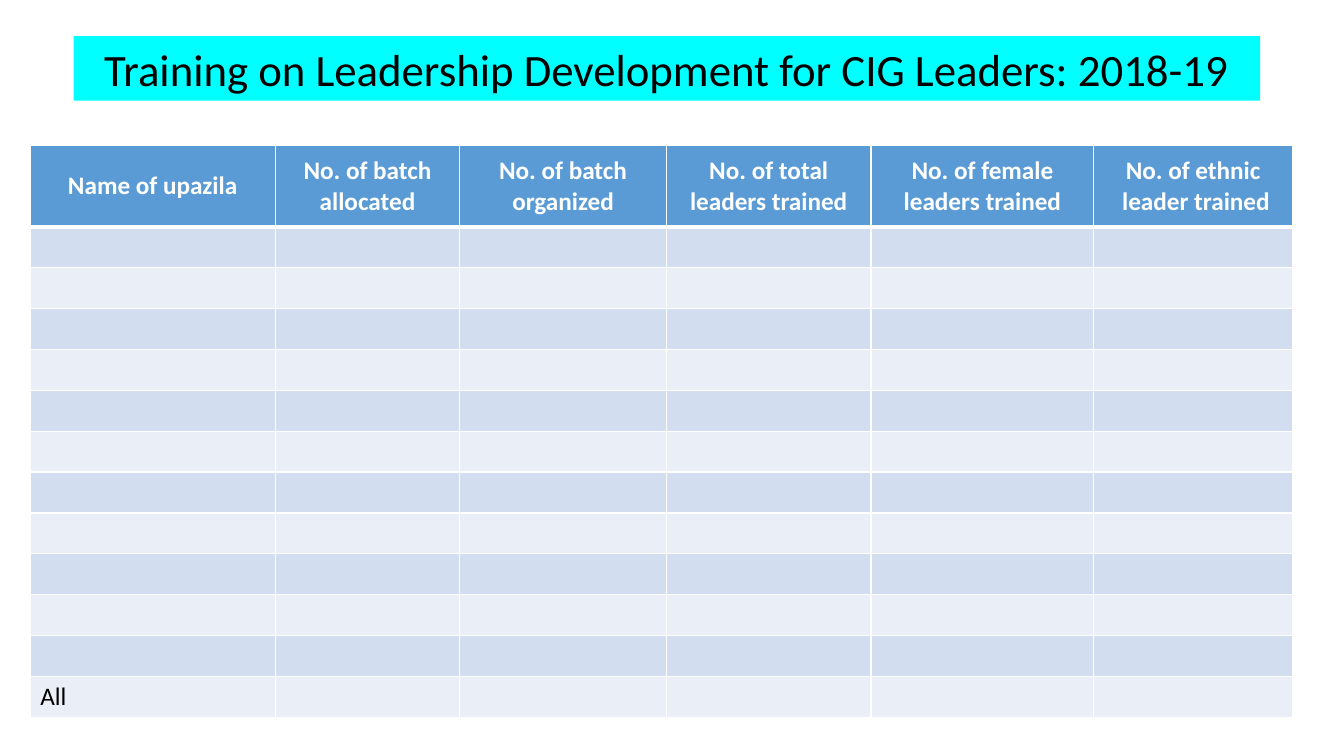
from lxml import etree
from pptx import Presentation
from pptx import util as u
from pptx.dml.color import RGBColor
from pptx.enum import shapes, text
from pptx.oxml.ns import qn

TITLE = "Training on Leadership Development for CIG Leaders: 2018-19"
HEADS = [
    "Name of upazila",
    "No. of batch allocated",
    "No. of batch organized",
    " No. of total \nleaders trained",
    " No. of female \nleaders trained",
    " No. of ethnic \n leader trained",
]
TOTAL = "All"
WIDTHS = [2.43, 1.83, 2.05, 2.03, 2.21, 1.97]
HEAD_H, ROW_H, ROWS = 0.81, 0.405, 12
WIDE, HIGH = 13.33, 7.5
LEFT, TOP = 0.3, 1.44
BAR_W, BAR_H, BAR_TOP = 11.77, 0.64, 0.36

BLACK = RGBColor(0, 0, 0)
WHITE = RGBColor(255, 255, 255)
CYAN = RGBColor(0, 255, 255)
BLUE = RGBColor(0x5B, 0x9B, 0xD5)
BANDS = [RGBColor(0xEA, 0xEF, 0xF7), RGBColor(0xD2, 0xDE, 0xEF)]


def write(frame, words, size=18, color=BLACK, bold=False, align=text.PP_ALIGN.CENTER):
    frame.word_wrap = True
    for i, line in enumerate(words.split("\n")):
        para = frame.add_paragraph() if i else frame.paragraphs[0]
        para.alignment = align
        run = para.add_run()
        run.text = line
        font = run.font
        font.name, font.size, font.bold = "Calibri", u.Pt(size), bold
        font.color.rgb = color


def edge(cell, sides):
    props = cell._tc.get_or_add_tcPr()
    for side, width in sides.items():
        line = etree.SubElement(props, qn("a:ln" + side), w=str(u.Pt(width)))
        fill = etree.SubElement(line, qn("a:solidFill"))
        etree.SubElement(fill, qn("a:srgbClr"), val=str(WHITE))


def paint(part, color):
    part.fill.solid()
    part.fill.fore_color.rgb = color


deck = Presentation()
deck.slide_width, deck.slide_height = u.Inches(WIDE), u.Inches(HIGH)
slide = deck.slides.add_slide(deck.slide_layouts[6])

bar = slide.shapes.add_shape(
    shapes.MSO_SHAPE.RECTANGLE,
    u.Inches((WIDE - BAR_W) / 2 - 0.05), u.Inches(BAR_TOP),
    u.Inches(BAR_W), u.Inches(BAR_H))
bar.shadow.inherit = False
bar.line.fill.background()
paint(bar, CYAN)
write(bar.text_frame, TITLE, size=32)

grid = slide.shapes.add_table(
    ROWS + 1, len(WIDTHS), u.Inches(LEFT), u.Inches(TOP),
    u.Inches(sum(WIDTHS)), u.Inches(HEAD_H + ROWS * ROW_H)).table
for col, width in zip(grid.columns, WIDTHS):
    col.width = u.Inches(width)
for r, row in enumerate(grid.rows):
    row.height = u.Inches(ROW_H if r else HEAD_H)
    for c, cell in enumerate(row.cells):
        edge(cell, {"L": 1, "R": 1, "T": 3 if r == 1 else 1, "B": 1 if r else 3})
        paint(cell, BANDS[r % 2] if r else BLUE)
        if r == 0:
            cell.vertical_anchor = text.MSO_ANCHOR.MIDDLE
            write(cell.text_frame, HEADS[c], color=WHITE, bold=True)
write(grid.cell(ROWS, 0).text_frame, TOTAL, align=text.PP_ALIGN.LEFT)

deck.save("out.pptx")
